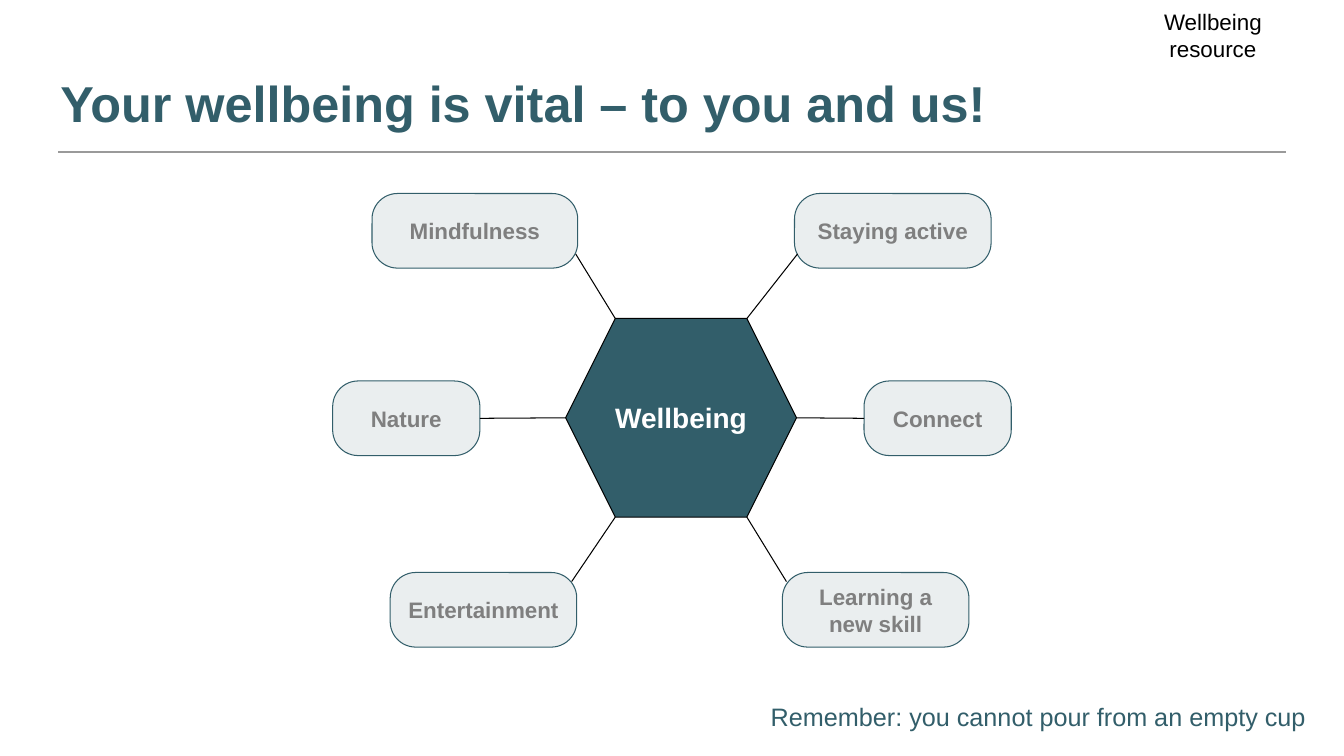
"""Build the wellbeing slide: a central hexagon linked to six topic boxes."""
import pptx
import pptx.util
import pptx.dml.color
import pptx.oxml
import pptx.oxml.ns
import pptx.enum.shapes
import pptx.enum.text

Inches = pptx.util.Inches
RGBColor = pptx.dml.color.RGBColor
MSO_SHAPE = pptx.enum.shapes.MSO_SHAPE
ALIGN = pptx.enum.text.PP_ALIGN
ANCHOR = pptx.enum.text.MSO_ANCHOR

TEAL = RGBColor(0x32, 0x5E, 0x6A)
GREY = RGBColor(0x7F, 0x7F, 0x7F)
RULE_GREY = RGBColor(0x9A, 0x9A, 0x9A)
BLACK = RGBColor(0, 0, 0)
WHITE = RGBColor(255, 255, 255)

TITLE = "Your wellbeing is vital – to you and us!"
TAG = "Wellbeing resource"
REMINDER = "Remember: you cannot pour from an empty cup "
HUB = "Wellbeing"
HUB_BOX = (5.61, 3.16, 2.29, 1.97)
HUB_INSET = 0.25 * HUB_BOX[3]

BOX_HEIGHT = 0.74
ROW_TOPS = (1.92, 3.78, 5.68)
# label, row, side, left, width, end of link (or connection site)
TOPICS = [
    ("Staying active", 0, "right", 7.88, 1.95, (7.91, 2.52)),
    ("Connect", 1, "right", 8.57, 1.46, 1),
    ("Mindfulness", 0, "left", 3.69, 2.04, (5.71, 2.52)),
    ("Nature", 1, "left", 3.3, 1.46, 3),
    ("Entertainment", 2, "left", 3.87, 1.85, (5.67, 5.77)),
    ("Learning a new skill", 2, "right", 7.76, 1.85, (7.8, 5.77)),
]


def set_text(shape, text, size, color, bold=False, align=ALIGN.CENTER, anchor=ANCHOR.MIDDLE, inset=None):
    frame = shape.text_frame
    frame.text = text
    frame.word_wrap = True
    frame.auto_size = pptx.enum.text.MSO_AUTO_SIZE.NONE
    frame.vertical_anchor = anchor
    if inset is not None:
        frame.margin_left = frame.margin_right = Inches(inset)
        frame.margin_top = frame.margin_bottom = Inches(inset)
    paragraph = frame.paragraphs[0]
    paragraph.alignment = align
    font = paragraph.runs[0].font
    font.name, font.size, font.bold = "Arial", pptx.util.Pt(size), bold
    font.color.rgb = color


def add_line(slide, start, end, color=BLACK, width=0.75):
    points = [Inches(value) for value in (*start, *end)]
    line = slide.shapes.add_connector(pptx.enum.shapes.MSO_CONNECTOR.STRAIGHT, *points)
    line.line.color.rgb = color
    line.line.width = pptx.util.Pt(width)
    line._element.spPr.append(pptx.oxml.parse_xml(f"<a:effectLst {pptx.oxml.ns.nsdecls('a')}/>"))
    return line


def add_block(slide, kind, box, line_color):
    shape = slide.shapes.add_shape(kind, *map(Inches, box))
    shape.shadow.inherit = False
    shape.fill.solid()
    shape.fill.fore_color.rgb = TEAL
    shape.line.color.rgb = line_color
    shape.line.width = pptx.util.Pt(0.75)
    return shape


def add_topic(slide, label, row, left, width):
    box = (left, ROW_TOPS[row], width, BOX_HEIGHT)
    shape = add_block(slide, MSO_SHAPE.ROUNDED_RECTANGLE, box, TEAL)
    shape.adjustments[0] = 0.342
    color = shape._element.spPr.find(pptx.oxml.ns.qn("a:solidFill"))[0]
    color.append(pptx.oxml.parse_xml(f'<a:alpha {pptx.oxml.ns.nsdecls("a")} val="10000"/>'))
    set_text(shape, label, 16, GREY, bold=True)
    return shape


def hub_corner(row, side):
    left, top, width, height = HUB_BOX
    inset = 0 if row == 1 else HUB_INSET
    x = left + inset if side == "left" else left + width - inset
    return x, top + height * row / 2


def main():
    presentation = pptx.Presentation()
    presentation.slide_width, presentation.slide_height = Inches(13.33), Inches(7.5)
    slide = presentation.slides.add_slide(presentation.slide_layouts[5])

    add_line(slide, (0.58, 1.51), (12.75, 1.51), RULE_GREY, 1)
    title = slide.shapes.title
    title.left, title.top, title.width, title.height = map(Inches, (0.58, 0.26, 12.16, 1.08))
    set_text(title, TITLE, 36, TEAL, True, ALIGN.LEFT, ANCHOR.BOTTOM, 0.02)

    hub = add_block(slide, MSO_SHAPE.HEXAGON, HUB_BOX, BLACK)
    set_text(hub, HUB, 20, WHITE, bold=True)

    for label, row, side, left, width, target in TOPICS:
        topic = add_topic(slide, label, row, left, width)
        start = hub_corner(row, side)
        if isinstance(target, int):
            add_line(slide, start, start).end_connect(topic, target)
        else:
            add_line(slide, start, target)

    reminder = slide.shapes.add_textbox(*map(Inches, (7.42, 6.91, 5.7, 0.4)))
    set_text(reminder, REMINDER, 18, TEAL, align=ALIGN.RIGHT, anchor=ANCHOR.TOP)
    tag = slide.shapes.add_textbox(*map(Inches, (11.06, 0.16, 1.94, 0.38)))
    set_text(tag, TAG, 16, BLACK, inset=0.06)

    presentation.save("out.pptx")


if __name__ == "__main__":
    main()
